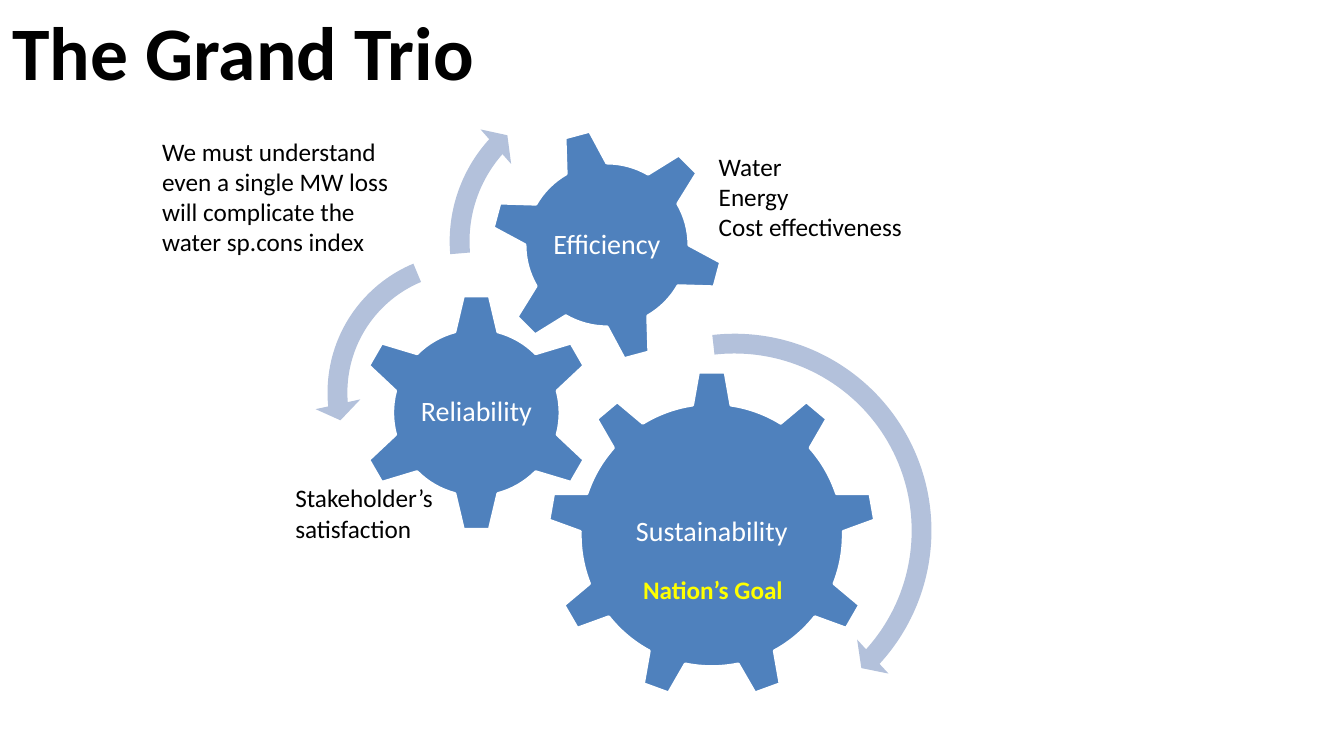
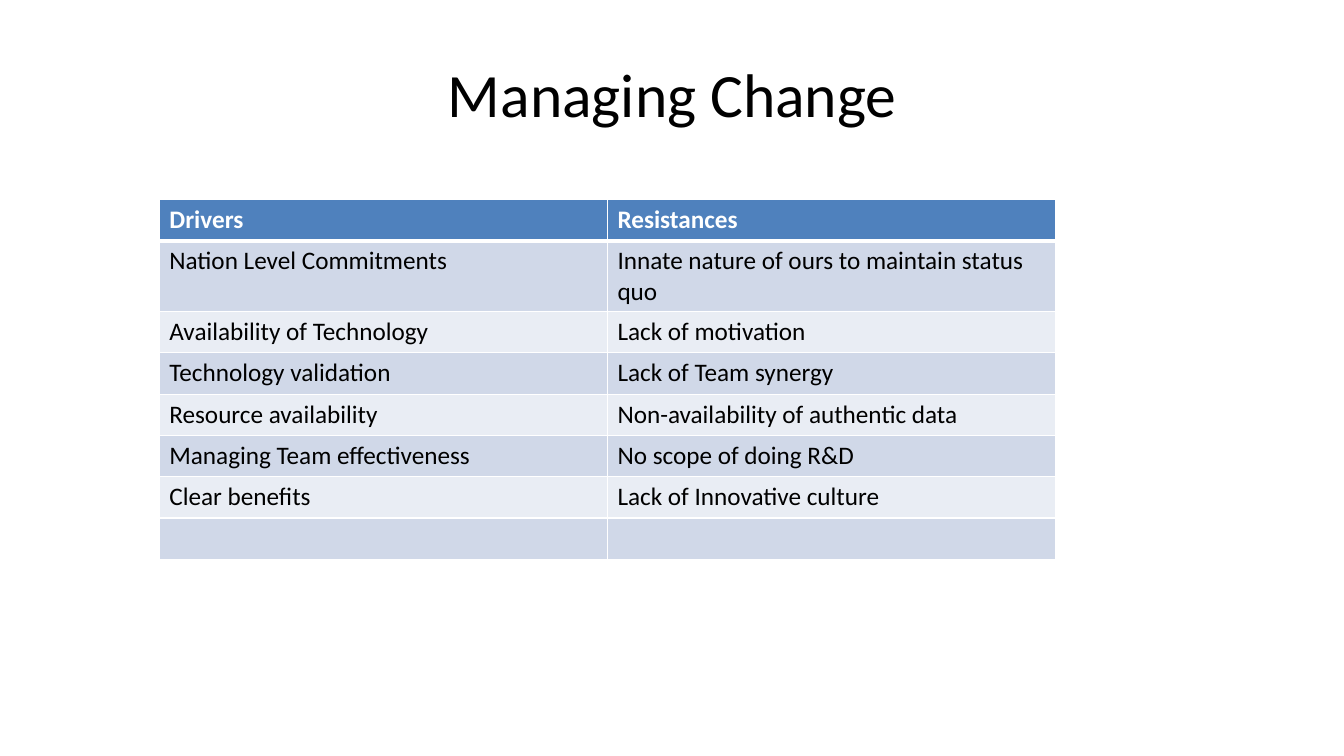
from lxml.etree import SubElement
from pptx import Presentation
from pptx.dml.color import RGBColor
from pptx.enum.shapes import MSO_SHAPE as Shape
from pptx.enum.text import MSO_ANCHOR as Anchor, MSO_AUTO_SIZE as AutoSize, PP_ALIGN as Align
from pptx.oxml.ns import qn
from pptx.util import Inches, Pt

FONT = "Calibri"
COLORS = {
    "text": "000000",
    "white": "FFFFFF",
    "blue": "4F81BD",
    "arrow": "B3C1DB",
    "band": "D0D8E8",
    "pale": "E9EDF4",
    "goal": "FFFF00",
}

# Name, gear shape, left, top, size, rotation, lift of the label
GEARS = [
    ("Sustainability", Shape.GEAR_9, 3.93, 2.93, 3.26, 0, 0.03),
    ("Reliability", Shape.GEAR_6, 2.04, 2.16, 2.37, 0, 0),
    ("Efficiency", Shape.GEAR_6, 3.36, 0.52, 2.32, 345, 0),
]
# Shape, left, top, size, thickness and head width (% of size),
# then head, end and start angles (degrees)
ARROWS = [
    (Shape.CIRCULAR_ARROW, 3.7, 2.43, 4.17, 4.7, 5.5, (4.98, 42.32, 263.54)),
    (Shape.LEFT_CIRCULAR_ARROW, 1.62, 1.63, 3.03, 6.5, 7.5, (7.17, 174.82, 247.3)),
    (Shape.CIRCULAR_ARROW, 2.83, 0.01, 3.27, 6, 7, (6.57, 221.9, 175.14)),
]
# Lines, left, top, width, height, font options
NOTES = [
    (["Water", "Energy", "Cost effectiveness"], 5.53, 0.7, 2.05, 1.01, {}),
    (["Stakeholder’s satisfaction"], 1.33, 3.99, 2.15, 0.71, {}),
    (["Nation’s Goal"], 4.78, 4.9, 2.15, 0.4, {"color": "goal", "bold": True}),
    (["We must understand even a single MW loss will complicate the water sp.cons index"],
     0.01, 0.55, 2.63, 1.31, {}),
]
CHANGE_ROWS = [
    ("Drivers", "Resistances"),
    ("Nation Level Commitments", "Innate nature of ours to maintain status quo"),
    ("Availability of Technology", "Lack of motivation"),
    ("Technology validation", "Lack of Team synergy"),
    ("Resource availability", "Non-availability of authentic data"),
    ("Managing Team effectiveness", "No scope of doing R&D"),
    ("Clear benefits", "Lack of Innovative culture"),
    ("", ""),
]


def rgb(name):
    return RGBColor.from_string(COLORS[name])


def set_font(para, size, color="text", bold=False):
    para.font.name = FONT
    para.font.size = Pt(size)
    para.font.bold = bold
    para.font.color.rgb = rgb(color)


def add_text(page, lines, left, top, width, height, size=18, color="text", bold=False,
             align=Align.LEFT, anchor=Anchor.TOP, wrap=True, inset=None, spacing=None):
    box = page.shapes.add_textbox(Inches(left), Inches(top), Inches(width), Inches(height))
    frame = box.text_frame
    frame.word_wrap = wrap
    frame.auto_size = AutoSize.NONE if anchor == Anchor.MIDDLE else AutoSize.SHAPE_TO_FIT_TEXT
    frame.vertical_anchor = anchor
    if inset is not None:
        frame.margin_left = frame.margin_right = Inches(inset)
        frame.margin_top = frame.margin_bottom = Inches(inset)
    for index, line in enumerate(lines):
        para = frame.add_paragraph() if index else frame.paragraphs[0]
        para.add_run().text = line
        para.alignment = align
        if spacing:
            para.line_spacing = spacing
        set_font(para, size, color, bold)
    return box


def add_line_fill(parent, tag, points, color):
    line = SubElement(parent, qn(tag), w=str(Pt(points)))
    fill = SubElement(line, qn("a:solidFill"))
    SubElement(fill, qn("a:srgbClr"), val=COLORS[color])


def add_figure(page, kind, left, top, size, color):
    figure = page.shapes.add_shape(kind, Inches(left), Inches(top), Inches(size), Inches(size))
    figure.shadow.inherit = False
    figure.fill.solid()
    figure.fill.fore_color.rgb = rgb(color)
    return figure


def add_gear(page, name, kind, left, top, size, rotation, lift):
    gear = add_figure(page, kind, left, top, size, "blue")
    gear.rotation = rotation
    gear.line.color.rgb = rgb("white")
    gear.line.width = Pt(2)
    # Upright label in the middle of the gear
    label = 0.55 * size
    edge = (size - label) / 2
    add_text(page, [name], left + edge, top + edge - lift, label, label, size=20,
             color="white", align=Align.CENTER, anchor=Anchor.MIDDLE, inset=0.03, spacing=0.9)


def add_turn_arrow(page, kind, left, top, size, thickness, head, angles):
    arrow = add_figure(page, kind, left, top, size, "arrow")
    arrow.line.fill.background()
    values = [thickness / 100, *(angle * 0.6 for angle in angles), head / 100]
    for index, value in enumerate(values):
        arrow.adjustments[index] = value


def add_trio(page, left, top):
    for name, kind, x, y, *rest in GEARS:
        add_gear(page, name, kind, left + x, top + y, *rest)
    for kind, x, y, *rest in ARROWS:
        add_turn_arrow(page, kind, left + x, top + y, *rest)
    for lines, x, y, width, height, options in NOTES:
        add_text(page, lines, left + x, top + y, width, height, **options)


def add_change_table(page, left, top, width, row_height):
    columns = len(CHANGE_ROWS[0])
    table = page.shapes.add_table(
        len(CHANGE_ROWS), columns, Inches(left), Inches(top),
        Inches(width), Inches(row_height * len(CHANGE_ROWS))).table
    for row_index, texts in enumerate(CHANGE_ROWS):
        header = row_index == 0
        fill = "blue" if header else ("pale", "band")[row_index % 2]
        for column, text in enumerate(texts):
            cell = table.cell(row_index, column)
            cell.text = text
            set_font(cell.text_frame.paragraphs[0], 18, "white" if header else "text", header)
            # Borders come before the fill in the cell properties
            properties = cell._tc.get_or_add_tcPr()
            for side in "LRTB":
                thick = (header and side == "B") or (row_index == 1 and side == "T")
                add_line_fill(properties, f"a:ln{side}", 3 if thick else 1, "white")
            cell.fill.solid()
            cell.fill.fore_color.rgb = rgb(fill)


def build_trio_slide(page):
    title = add_text(page, ["The Grand Trio"], 0, 0, 4.83, 1.01, size=54, bold=True,
                     align=Align.CENTER, wrap=False)
    span = title.text_frame.paragraphs[0].runs[0]
    add_line_fill(span._r.get_or_add_rPr(), "a:ln", 0.75, "white")
    add_trio(page, 1.5, 0.75)


def build_change_slide(page):
    add_text(page, ["Managing Change"], 0.67, 0.3, 12, 1.25, size=44,
             align=Align.CENTER, anchor=Anchor.MIDDLE)
    add_change_table(page, 1.58, 1.98, 8.89, 0.41)


def main():
    deck = Presentation()
    deck.slide_width, deck.slide_height = Inches(13.33), Inches(7.5)
    for build in (build_trio_slide, build_change_slide):
        build(deck.slides.add_slide(deck.slide_layouts[6]))
    deck.save("out.pptx")


if __name__ == "__main__":
    main()
